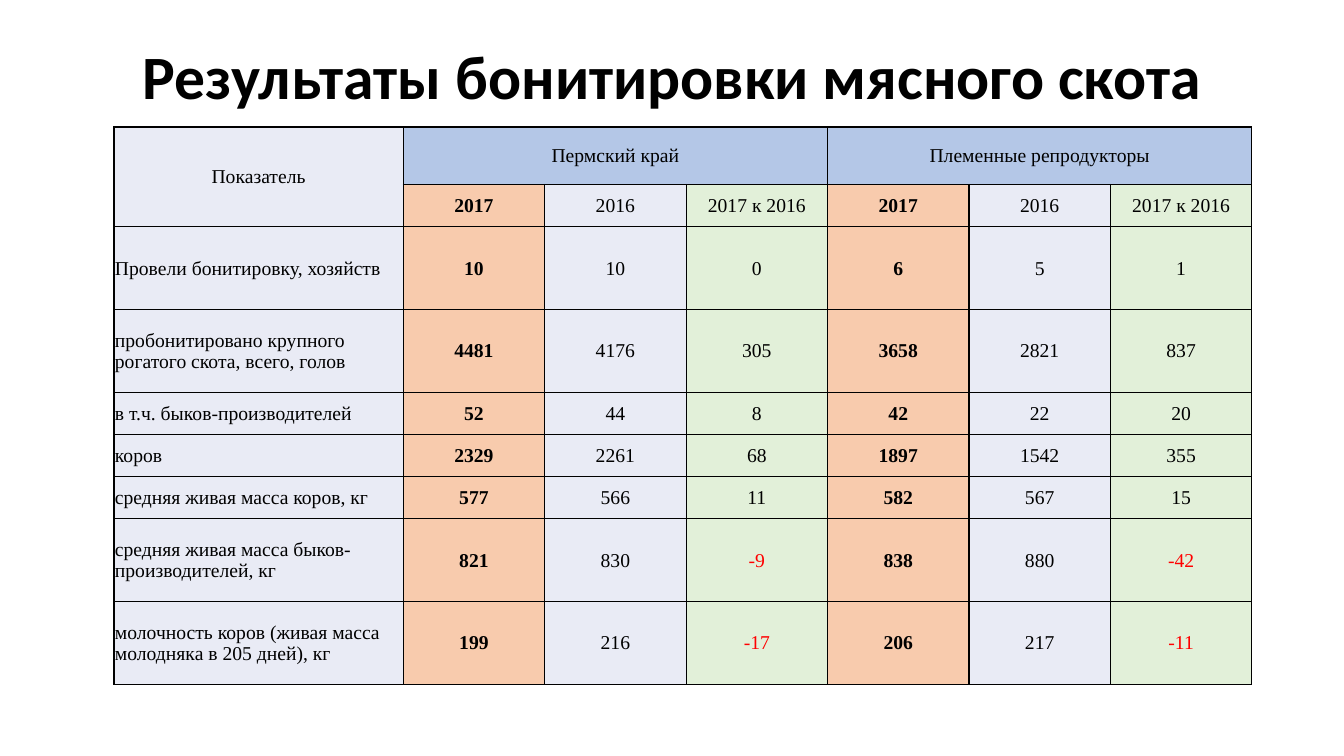
from lxml import etree
from pptx import Presentation
from pptx.dml.color import RGBColor
from pptx.enum.text import MSO_ANCHOR, PP_ALIGN
from pptx.oxml.ns import qn
from pptx.util import Inches, Pt

MIDDLE = MSO_ANCHOR.MIDDLE
LEFT, CENTER = PP_ALIGN.LEFT, PP_ALIGN.CENTER

# Content
TITLE = "Результаты бонитировки мясного скота"
INDICATOR = "Показатель"
GROUPS = ["Пермский край", "Племенные репродукторы"]
PERIODS = ["2017", "2016", "2017 к 2016"]
# Indicator, then (2017, 2016) for each group; the change is computed
RESULTS = [
    ("Провели бонитировку, хозяйств", (10, 10), (6, 5)),
    ("пробонитировано крупного рогатого скота, всего, голов", (4481, 4176), (3658, 2821)),
    ("в т.ч. быков-производителей", (52, 44), (42, 22)),
    ("коров", (2329, 2261), (1897, 1542)),
    ("средняя живая масса коров, кг", (577, 566), (582, 567)),
    ("средняя живая масса быков-производителей, кг", (821, 830), (838, 880)),
    ("молочность коров (живая масса молодняка в 205 дней), кг", (199, 216), (206, 217)),
]

# Style and layout
COLORS = {"text": "000000", "negative": "FF0000", "border": "000000", "plain": "E9EBF5",
          "group": "B4C7E7", "current": "F8CBAD", "change": "E2F0D9"}
PERIOD_FILLS = ["current", "plain", "change"]
SPAN = len(PERIODS)
LABEL_WIDTH, VALUE_WIDTH = 2.87, 1.403
SHORT, TALL = 0.417, 0.823
ROW_HEIGHTS = [0.57, SHORT, TALL, TALL, SHORT, SHORT, SHORT, TALL, TALL]
COLUMN_WIDTHS = [LABEL_WIDTH] + [VALUE_WIDTH] * SPAN * len(GROUPS)


def format_text(text_frame, text, font_name, size, alignment, bold=False, color="text"):
    text_frame.text = text
    paragraph = text_frame.paragraphs[0]
    paragraph.alignment = alignment
    font = paragraph.runs[0].font
    font.name, font.size, font.bold = font_name, Pt(size), bold
    font.color.rgb = RGBColor.from_string(COLORS[color])
    return paragraph


def add_borders(cell):
    properties = cell._tc.get_or_add_tcPr()
    for side in ("a:lnL", "a:lnR", "a:lnT", "a:lnB"):
        line = etree.SubElement(properties, qn(side), w=str(Pt(1)))
        fill = etree.SubElement(line, qn("a:solidFill"))
        etree.SubElement(fill, qn("a:srgbClr"), val=COLORS["border"])


def write_cell(cell, text, fill, alignment=CENTER, bold=False, color="text"):
    cell.fill.solid()
    cell.fill.fore_color.rgb = RGBColor.from_string(COLORS[fill])
    format_text(cell.text_frame, text, "Times New Roman", 14, alignment, bold, color)


def main():
    presentation = Presentation()
    presentation.slide_width, presentation.slide_height = Inches(13.33), Inches(7.5)
    slide = presentation.slides.add_slide(presentation.slide_layouts[6])

    # Title
    title = slide.shapes.add_textbox(Inches(0.92), Inches(0.4), Inches(11.5), Inches(0.78))
    title.text_frame.word_wrap = True
    title.text_frame.vertical_anchor = MIDDLE
    format_text(title.text_frame, TITLE, "Calibri", 44, CENTER, bold=True).line_spacing = 0.9

    # Empty table grid
    table = slide.shapes.add_table(
        len(ROW_HEIGHTS), len(COLUMN_WIDTHS), Inches(1.13), Inches(1.26),
        Inches(sum(COLUMN_WIDTHS)), Inches(sum(ROW_HEIGHTS))).table
    table.first_row = table.horz_banding = False
    for column, width in zip(table.columns, COLUMN_WIDTHS):
        column.width = Inches(width)
    for row, height in zip(table.rows, ROW_HEIGHTS):
        row.height = Inches(height)
    for cell in table.iter_cells():
        add_borders(cell)
        cell.vertical_anchor = MIDDLE
        cell.margin_left = cell.margin_right = cell.margin_top = Inches(0.01)
        cell.margin_bottom = 0
        cell.fill.solid()
        cell.fill.fore_color.rgb = RGBColor.from_string(COLORS["plain"])

    # Indicator column
    table.cell(0, 0).merge(table.cell(1, 0))
    write_cell(table.cell(0, 0), INDICATOR, "plain")
    for row, result in enumerate(RESULTS, start=2):
        write_cell(table.cell(row, 0), result[0], "plain", LEFT)

    # One block of three columns per group
    for index, group in enumerate(GROUPS):
        first = 1 + index * SPAN
        table.cell(0, first).merge(table.cell(0, first + SPAN - 1))
        write_cell(table.cell(0, first), group, "group")
        block = [PERIODS]
        for result in RESULTS:
            current, previous = result[1 + index]
            block.append([str(current), str(previous), str(current - previous)])
        for row, texts in enumerate(block, start=1):
            for offset, (text, fill) in enumerate(zip(texts, PERIOD_FILLS)):
                write_cell(table.cell(row, first + offset), text, fill,
                           bold=fill == "current",
                           color="negative" if text.startswith("-") else "text")

    presentation.save("out.pptx")


if __name__ == "__main__":
    main()
